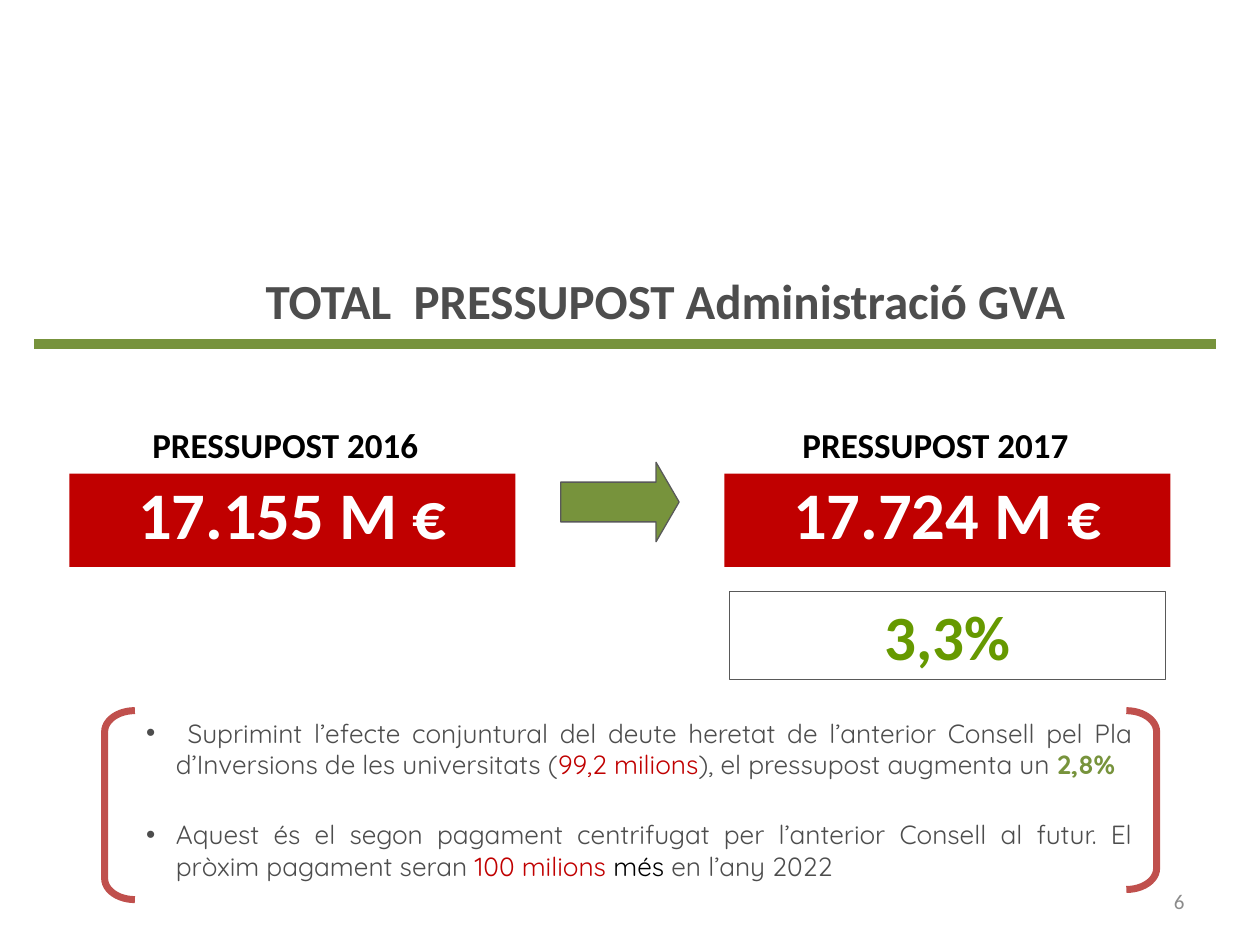
import pptx
import pptx.util
import pptx.dml.color
import pptx.enum.shapes
import pptx.enum.text
import pptx.oxml
import pptx.oxml.ns

Pt = pptx.util.Pt
RGBColor = pptx.dml.color.RGBColor
MSO_SHAPE = pptx.enum.shapes.MSO_SHAPE
PP_ALIGN = pptx.enum.text.PP_ALIGN
MSO_ANCHOR = pptx.enum.text.MSO_ANCHOR

GREEN = RGBColor(0x77, 0x93, 0x3C)
BRIGHT_GREEN = RGBColor(0x66, 0x99, 0x00)
RED = RGBColor(0xC0, 0x00, 0x00)
BRACKET_RED = RGBColor(0xC0, 0x50, 0x4D)
DARK_GREY = RGBColor(0x4D, 0x4D, 0x4D)
OUTLINE_GREY = RGBColor(0x59, 0x59, 0x59)
NUMBER_GREY = RGBColor(0x8B, 0x8B, 0x8B)
BLACK = RGBColor(0x00, 0x00, 0x00)
WHITE = RGBColor(0xFF, 0xFF, 0xFF)

BULLETS = [
    [
        (" Suprimint l’efecte conjuntural del deute heretat de l’anterior Consell pel Pla "
         "d’Inversions de les universitats (", DARK_GREY, False),
        ("99,2 milions", RED, False),
        ("), el pressupost augmenta un ", DARK_GREY, False),
        ("2,8%", GREEN, True),
    ],
    [
        ("Aquest és el segon pagament centrifugat per l’anterior Consell al futur. "
         "El pròxim pagament seran ", DARK_GREY, False),
        ("100 milions ", RED, False),
        ("més ", BLACK, False),
        ("en l’any 2022", DARK_GREY, False),
    ],
]


def place(shape, left, top, width, height):
    shape.left, shape.top = Pt(left), Pt(top)
    shape.width, shape.height = Pt(width), Pt(height)


def add_run(paragraph, text, size, color, bold=False, font="Calibri"):
    run = paragraph.add_run()
    run.text = text
    run.font.name = font
    run.font.size = Pt(size)
    run.font.bold = bold
    run.font.color.rgb = color


def set_text(shape, text, size, color, bold=True, align=PP_ALIGN.CENTER,
             anchor=MSO_ANCHOR.TOP, spacing=None):
    frame = shape.text_frame
    frame.word_wrap = True
    frame.auto_size = pptx.enum.text.MSO_AUTO_SIZE.NONE
    frame.vertical_anchor = anchor
    paragraph = frame.paragraphs[0]
    paragraph.alignment = align
    paragraph.line_spacing = spacing
    add_run(paragraph, text, size, color, bold)


def add_text(slide, box, text, size, color, **options):
    shape = slide.shapes.add_textbox(*(Pt(length) for length in box))
    set_text(shape, text, size, color, **options)


def add_shape(slide, kind, box, fill=None, line=None, line_width=0.75):
    shape = slide.shapes.add_shape(kind, *(Pt(length) for length in box))
    shape.shadow.inherit = False
    if fill is None:
        shape.fill.background()
    else:
        shape.fill.solid()
        shape.fill.fore_color.rgb = fill
    if line is None:
        shape.line.fill.background()
    else:
        shape.line.color.rgb = line
        shape.line.width = Pt(line_width)
    return shape


def add_heading(slide, left, top, width, height):
    title = slide.shapes.title
    place(title, left, top, width, height)
    set_text(title, "TOTAL  PRESSUPOST Administració GVA", 28, DARK_GREY)
    rule_top = top + 45.4
    rule = slide.shapes.add_connector(
        pptx.enum.shapes.MSO_CONNECTOR.STRAIGHT,
        Pt(left - 0.7), Pt(rule_top), Pt(left + 674.6), Pt(rule_top))
    rule.line.color.rgb = GREEN
    rule.line.width = Pt(6)
    rule._element.spPr.append(pptx.oxml.parse_xml(
        "<a:effectLst %s/>" % pptx.oxml.ns.nsdecls("a")))


def add_budget(slide, left, top, width, height, label_left, label, amount):
    add_text(slide, (label_left, top, 297.4, 31.7), label, 20, BLACK)
    bar_height = 53.3
    bar = add_shape(slide, MSO_SHAPE.RECTANGLE,
                    (left, top + height - bar_height, width, bar_height), fill=RED)
    set_text(bar, amount, 38, WHITE, spacing=0.93)


def add_comparison(slide, left, top, width, height):
    bar_width = 254.9
    right = left + width - bar_width
    add_budget(slide, left, top, bar_width, height, 14.4, "PRESSUPOST 2016", "17.155 M €")
    add_budget(slide, right, top, bar_width, height, 385.9, "PRESSUPOST 2017", "17.724 M €")
    arrow = add_shape(slide, MSO_SHAPE.RIGHT_ARROW, (left + 280.8, top + 25.9, 67.7, 45.4),
                      fill=GREEN, line=OUTLINE_GREY)
    arrow.adjustments[1] = 0.29
    growth = add_shape(slide, MSO_SHAPE.RECTANGLE,
                       (right + 2.9, top + height + 14, bar_width - 5.8, 50.4),
                       line=OUTLINE_GREY)
    set_text(growth, "3,3%", 36, BRIGHT_GREEN)


def add_bullet(paragraph, runs):
    properties = paragraph._p.get_or_add_pPr()
    properties.set("marL", str(Pt(17)))
    properties.set("indent", str(Pt(-17)))
    for xml in ('<a:buFont %s typeface="Arial"/>', '<a:buChar %s char="•"/>'):
        properties.append(pptx.oxml.parse_xml(xml % pptx.oxml.ns.nsdecls("a")))
    paragraph.alignment = PP_ALIGN.JUSTIFY
    for text, color, bold in runs:
        add_run(paragraph, text, 15, color, bold, "Quicksand")


def add_notes_panel(slide, left, top, width, height):
    body = slide.placeholders[1]
    place(body, left + 16.5, top, width - 23, 97.2)
    frame = body.text_frame
    frame.word_wrap = True
    frame.auto_size = pptx.enum.text.MSO_AUTO_SIZE.NONE
    for index, runs in enumerate(BULLETS):
        paragraph = frame.add_paragraph() if index else frame.paragraphs[0]
        paragraph.space_before = Pt(22 if index else 0)
        add_bullet(paragraph, runs)
    bracket_width = 17.3
    for bracket_left, bracket_height, flipped in (
            (left, height, False), (left + width - bracket_width, height - 5.8, True)):
        bracket = add_shape(slide, MSO_SHAPE.LEFT_BRACKET,
                            (bracket_left, top, bracket_width, bracket_height),
                            line=BRACKET_RED, line_width=4)
        bracket.adjustments[0] = 0.7
        if flipped:
            bracket._element.spPr.xfrm.set("flipH", "1")


def main():
    presentation = pptx.Presentation()
    presentation.slide_width, presentation.slide_height = Pt(720), Pt(540)
    slide = presentation.slides.add_slide(presentation.slide_layouts[1])
    add_heading(slide, 20.2, 151.2, 720, 41)
    add_comparison(slide, 39.6, 238.3, 629.3, 85.7)
    add_notes_panel(slide, 59.8, 406.1, 601.2, 108)
    add_text(slide, (516.2, 500.4, 167.8, 28.8), "6", 12, NUMBER_GREY, bold=False,
             align=PP_ALIGN.RIGHT, anchor=MSO_ANCHOR.MIDDLE)
    presentation.save("out.pptx")


if __name__ == "__main__":
    main()
